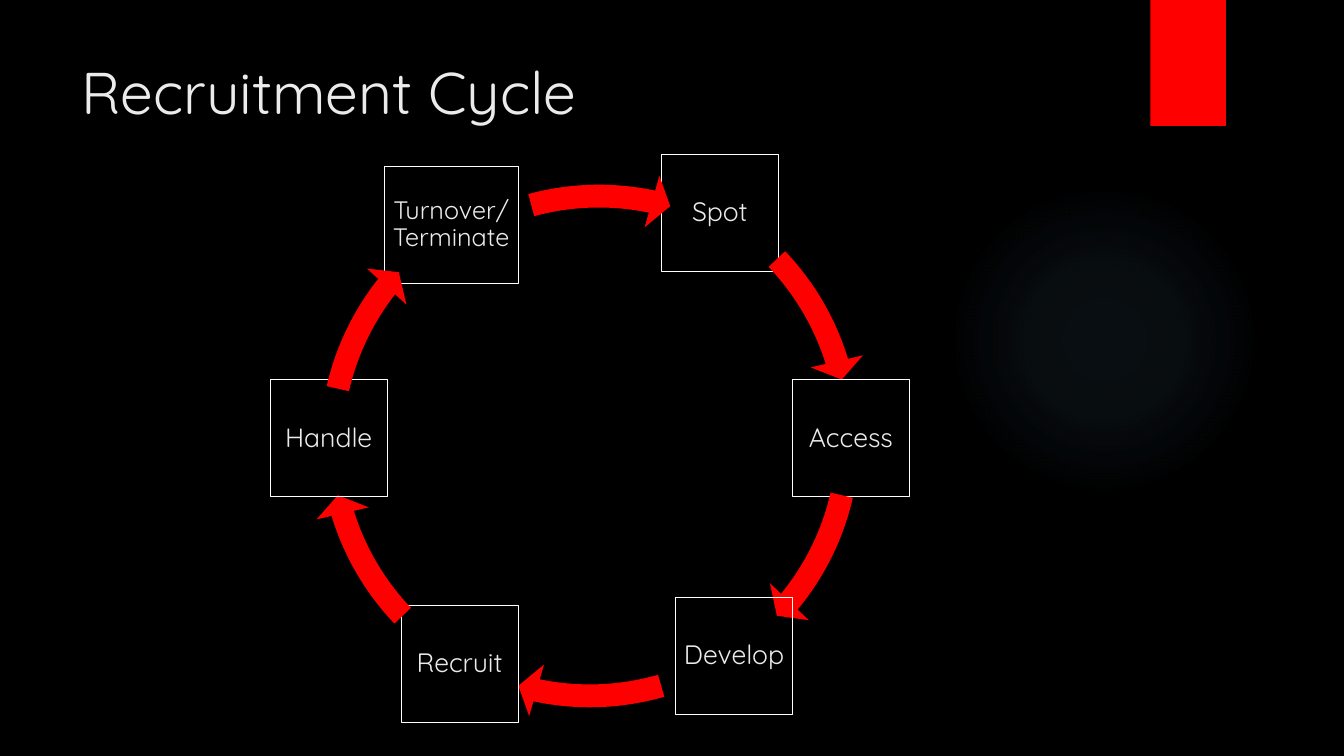
from lxml import etree
from pptx import Presentation
from pptx import util as u
from pptx.dml.color import RGBColor
from pptx.enum import shapes, text
from pptx.oxml import parse_xml
from pptx.oxml.ns import nsdecls, qn

SHAPE = shapes.MSO_SHAPE


def color(hex_code):
    return RGBColor.from_string(hex_code)


class CycleSlide:
    font = "Quicksand"
    background, accent, ink, outline = "000000", "FF0000", "EBEBEB", "FFFFFF"

    def __init__(self, slide):
        self.slide = slide
        slide.background.fill.solid()
        slide.background.fill.fore_color.rgb = color(self.background)

    def shape(self, kind, left, top, width, height, fill=None):
        item = self.slide.shapes.add_shape(
            kind, *(u.Inches(v) for v in (left, top, width, height)))
        item.shadow.inherit = False
        item.line.fill.background()
        if fill:
            item.fill.solid()
            item.fill.fore_color.rgb = color(fill)
        else:
            item.fill.background()
        return item

    def glow(self, left, top, size, tint, stops):
        """Circle that fades outwards; stops are (position %, opacity %)."""
        circle = self.shape(SHAPE.OVAL, left, top, size, size)
        gradient = parse_xml(
            f'<a:gradFill {nsdecls("a")} rotWithShape="1"><a:gsLst/><a:path path="circle">'
            '<a:fillToRect l="50000" t="50000" r="50000" b="50000"/></a:path></a:gradFill>')
        for position, opacity in stops:
            stop = etree.SubElement(gradient[0], qn("a:gs"), pos=str(position * 1000))
            tone = etree.SubElement(stop, qn("a:srgbClr"), val=tint)
            etree.SubElement(tone, qn("a:alpha"), val=str(opacity * 1000))
        properties = circle.element.spPr
        properties.replace(properties.find(qn("a:noFill")), gradient)

    def set_words(self, frame, words, size, inset):
        frame.word_wrap = True
        frame.margin_left = frame.margin_right = u.Inches(inset)
        frame.text = words
        for run in frame.paragraphs[0].runs:
            run.font.size = u.Pt(size)
            run.font.name = self.font
            run.font.color.rgb = color(self.ink)

    def title(self, words, left, top, width, height):
        box = self.slide.shapes.add_textbox(
            *(u.Inches(v) for v in (left, top, width, height)))
        self.set_words(box.text_frame, words, 42, 0.1)

    def stage(self, words, left, top, width=1.16, size=19, inset=0.03):
        box = self.shape(SHAPE.RECTANGLE, left, top, width, 1.16)
        box.line.color.rgb = color(self.outline)
        box.line.width = u.Pt(0.75)
        frame = box.text_frame
        self.set_words(frame, words, size, inset)
        frame.margin_top = frame.margin_bottom = u.Inches(inset)
        frame.vertical_anchor = text.MSO_ANCHOR.MIDDLE
        frame.paragraphs[0].alignment = text.PP_ALIGN.CENTER
        frame.paragraphs[0].line_spacing = 0.9

    def arrow(self, start, end, left=3.02, top=1.51):
        """Clockwise arc between two angles in degrees, measured from the right."""
        arc = self.shape(SHAPE.CIRCULAR_ARROW, left, top, 5.66, 5.66, self.accent)
        per_degree = 0.6
        values = (0.04, 2.5, end * per_degree, start * per_degree, 0.047)
        for index, value in enumerate(values):
            arc.adjustments[index] = value


def main():
    deck = Presentation()
    deck.slide_width, deck.slide_height = u.Inches(13.33), u.Inches(7.5)
    page = CycleSlide(deck.slides.add_slide(deck.slide_layouts[6]))

    # Backdrop and title
    page.glow(9.41, 1.83, 3.08, "7AC4F0", [(0, 7), (36, 6), (69, 0)])
    page.shape(SHAPE.RECTANGLE, 11.41, 0, 0.75, 1.25, page.accent)
    page.title("Recruitment Cycle", 0.71, 0.5, 10.28, 1.53)

    # Stages and the arrows between them, from back to front
    page.stage("Spot", 6.56, 1.53)
    page.arrow(316.37, 342.9)
    page.stage("Access", 7.86, 3.77)
    page.arrow(12.93, 39.47)
    page.arrow(73.96, 101.87)
    page.stage("Recruit", 3.98, 6.01)
    page.arrow(136.37, 162.9)
    page.stage("Turnover/ Terminate", 3.81, 1.65, width=1.33, size=18, inset=0.02)
    page.arrow(254.85, 281.87, left=3.11, top=1.68)
    page.stage("Handle", 2.68, 3.77)
    page.arrow(192.93, 218.22, top=1.6)
    page.stage("Develop", 6.7, 5.93)

    deck.save("out.pptx")


if __name__ == "__main__":
    main()
